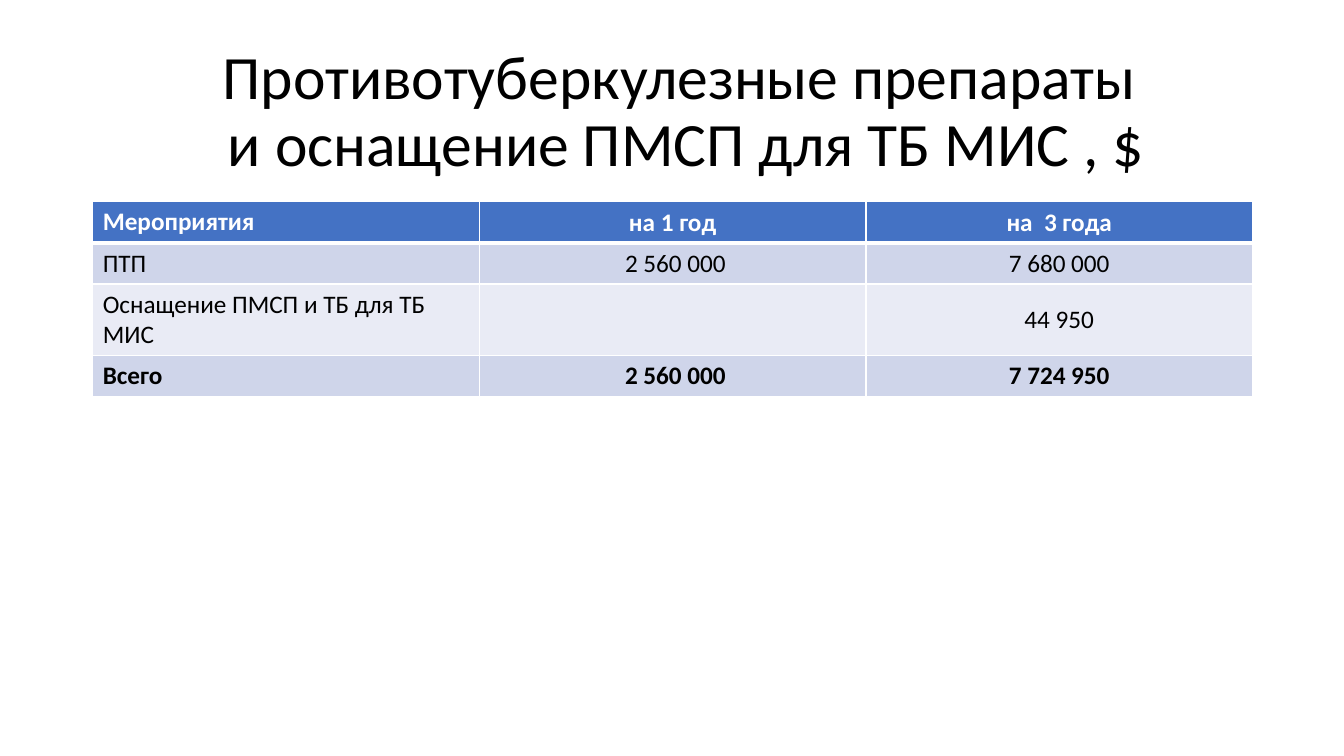
from lxml import etree
from pptx import Presentation
from pptx import util as u
from pptx.dml.color import RGBColor
from pptx.enum import text
from pptx.oxml.ns import qn

WIDTH, HEIGHT = 13.33, 7.5
FONT = "Calibri"
COLORS = {
    "text": "000000",
    "white": "FFFFFF",
    "header": "4472C4",
    "band_dark": "CFD5EA",
    "band_light": "E9EBF5",
}
TITLE_LINES = ["Противотуберкулезные препараты ", "и оснащение ПМСП для ТБ МИС , $"]
BUDGET = [
    ["Мероприятия", "на 1 год", "на  3 года"],
    ["ПТП", " 2 560 000", "7 680 000"],
    ["Оснащение ПМСП и ТБ для ТБ МИС", "", "44 950"],
    ["Всего", " 2 560 000", "7 724 950"],
]
ROW_HEIGHTS = [0.41, 0.4, 0.7, 0.4]


def across(share):
    return u.Inches(WIDTH * share)


def down(share):
    return u.Inches(HEIGHT * share)


def add_span(para, words, size, color, bold=False):
    span = para.add_run()
    span.text = words
    span.font.name = FONT
    span.font.size = u.Pt(size)
    span.font.bold = bold
    span.font.color.rgb = RGBColor.from_string(COLORS[color])


def add_title(page):
    box = page.shapes.title
    box.left, box.top = across(0.052), down(0.053)
    box.width, box.height = across(0.918), down(0.193)
    frame = box.text_frame
    frame.word_wrap = True
    frame.auto_size = text.MSO_AUTO_SIZE.NONE
    frame.vertical_anchor = text.MSO_ANCHOR.MIDDLE
    para = frame.paragraphs[0]
    para.alignment = text.PP_ALIGN.CENTER
    para.line_spacing = 0.9
    for index, line in enumerate(TITLE_LINES):
        if index:
            para.add_line_break()
        add_span(para, line, 44, "text")


def set_borders(cell, widths):
    # Border lines must come before the fill in the cell properties
    props = cell._tc.get_or_add_tcPr()
    for index, (side, width) in enumerate(widths.items()):
        line = etree.Element(qn(f"a:ln{side}"), w=str(u.Pt(width)))
        fill = etree.SubElement(line, qn("a:solidFill"))
        etree.SubElement(fill, qn("a:srgbClr"), val=COLORS["white"])
        props.insert(index, line)


def fill_cell(cell, words, row, column):
    is_header = row == 0
    bands = ["band_light", "band_dark"]
    cell.fill.solid()
    cell.fill.fore_color.rgb = RGBColor.from_string(
        COLORS["header" if is_header else bands[row % 2]])
    set_borders(cell, {"L": 1, "R": 1, "T": 3 if row == 1 else 1, "B": 3 if is_header else 1})
    para = cell.text_frame.paragraphs[0]
    if column:
        cell.vertical_anchor = text.MSO_ANCHOR.MIDDLE
        para.alignment = text.PP_ALIGN.CENTER
    if words:
        is_bold = row in (0, len(BUDGET) - 1)
        add_span(para, words, 18, "white" if is_header else "text", is_bold)


def add_budget_table(page):
    column_count = len(BUDGET[0])
    table = page.shapes.add_table(
        len(BUDGET), column_count, across(0.069), down(0.267),
        across(0.863), u.Inches(sum(ROW_HEIGHTS))).table
    for column in table.columns:
        column.width = across(0.863 / column_count)
    for row, values in enumerate(BUDGET):
        table.rows[row].height = u.Inches(ROW_HEIGHTS[row])
        for column, words in enumerate(values):
            fill_cell(table.cell(row, column), words, row, column)


def main():
    deck = Presentation()
    deck.slide_width, deck.slide_height = across(1), down(1)
    # Title-only page with the budget below the title
    page = deck.slides.add_slide(deck.slide_layouts[5])
    add_title(page)
    add_budget_table(page)
    deck.save("out.pptx")


if __name__ == "__main__":
    main()
